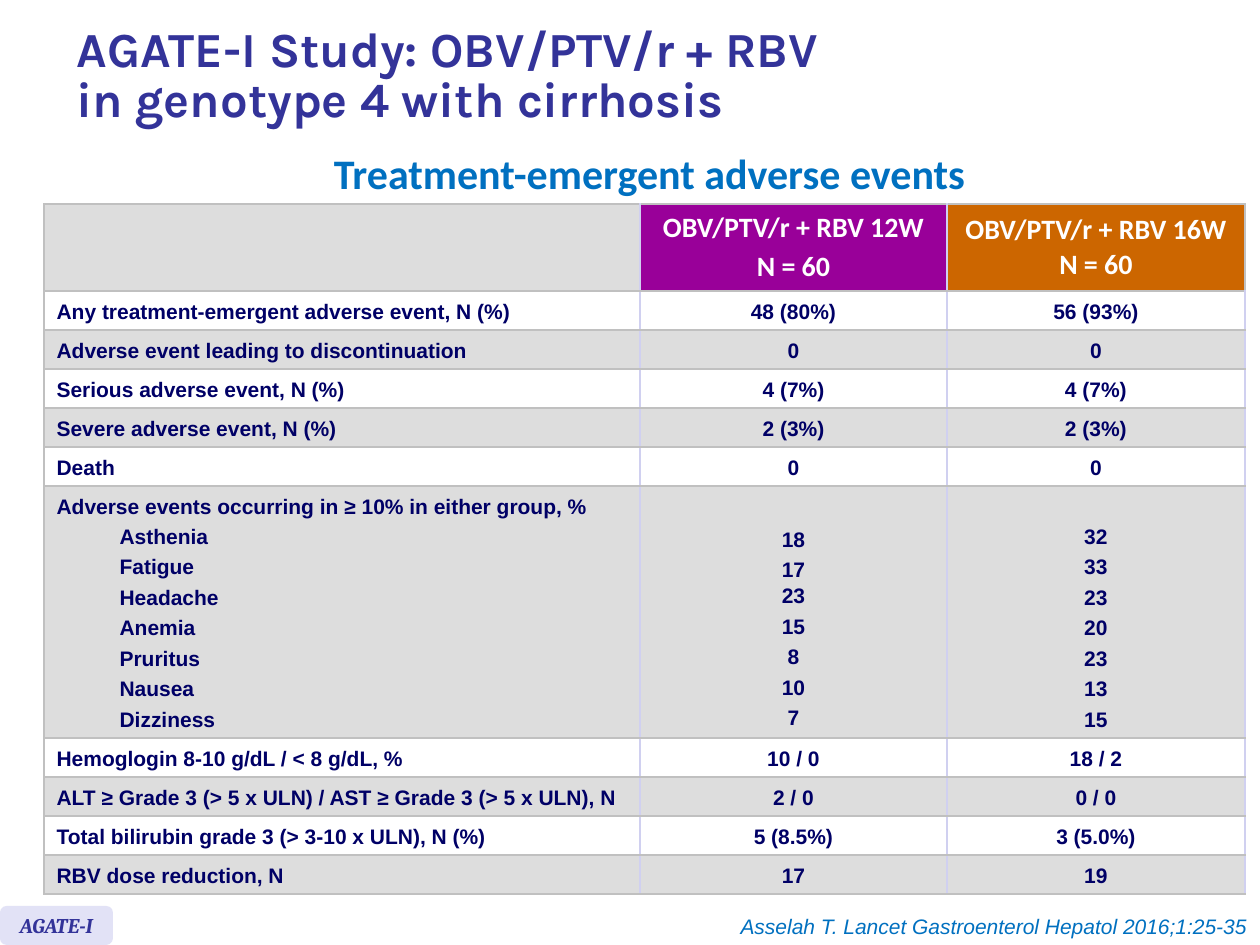
from dataclasses import dataclass, replace

from lxml import etree
from pptx import Presentation
from pptx.dml.color import RGBColor
from pptx.enum.shapes import MSO_SHAPE
from pptx.enum.text import MSO_ANCHOR, MSO_AUTO_SIZE, PP_ALIGN
from pptx.oxml.ns import qn
from pptx.util import Emu, Pt

LEFT, MID, RIGHT = PP_ALIGN.LEFT, PP_ALIGN.CENTER, PP_ALIGN.RIGHT
CENTER, BOTTOM = MSO_ANCHOR.MIDDLE, MSO_ANCHOR.BOTTOM
ROUND = MSO_SHAPE.ROUNDED_RECTANGLE
FIXED = MSO_AUTO_SIZE.NONE

WHITE = RGBColor(0xFF, 0xFF, 0xFF)
GREY = RGBColor(0xDD, 0xDD, 0xDD)
RULE = RGBColor(0xC0, 0xC0, 0xC0)
LILAC = RGBColor(0xD0, 0xD0, 0xF0)
PALE = RGBColor(0xE2, 0xE2, 0xF6)
PURPLE = RGBColor(0x99, 0x00, 0x99)
ORANGE = RGBColor(0xCC, 0x66, 0x00)
NAVY = RGBColor(0x00, 0x00, 0x66)
INDIGO = RGBColor(0x33, 0x33, 0x99)
BLUE = RGBColor(0x00, 0x70, 0xC0)

WIDTHS = (596, 307, 298)
HEAD_H, ROW_H, LIST_H = 87, 39, 252
INDENT = 63


@dataclass(frozen=True)
class Style:
    """Look of a paragraph; line is a length or a multiple."""
    face: str
    size: int
    color: RGBColor
    bold: bool = True
    italic: bool = False
    align: PP_ALIGN = MID
    line: Pt | float | None = None
    gap: float = 0


@dataclass(frozen=True)
class Row:
    """One table row: a label, its values, and the listed events."""
    label: str
    short: str
    long: str
    items: tuple[str, ...] = ()


TITLE = Style("Karla", 28, INDIGO, align=LEFT, line=0.85)
SUB = Style("Calibri", 24, BLUE, line=Pt(15.2))
HEAD = Style("Calibri", 16, WHITE, gap=3.2)
VALUE = Style("Arial", 12, NAVY, line=Pt(15), gap=2.4)
LABEL = replace(VALUE, align=LEFT)
BADGE = Style("Cambria", 12, INDIGO, italic=True)
CITE = Style("Arial", 12, BLUE, bold=False, italic=True, align=RIGHT)

ROWS = (
    Row("Any treatment-emergent adverse event, N (%)", "48 (80%)", "56 (93%)"),
    Row("Adverse event leading to discontinuation", "0", "0"),
    Row("Serious adverse event, N (%)", "4 (7%)", "4 (7%)"),
    Row("Severe adverse event, N (%)", "2 (3%)", "2 (3%)"),
    Row("Death", "0", "0"),
    Row("Adverse events occurring in ≥ 10% in either group, %",
        "18\n17\v23\n15\n8\n10\n7", "32\n33\n23\n20\n23\n13\n15",
        ("Asthenia", "Fatigue", "Headache", "Anemia", "Pruritus", "Nausea", "Dizziness")),
    Row("Hemoglogin 8-10 g/dL / < 8 g/dL, %", "10 / 0", "18 / 2"),
    Row("ALT ≥ Grade 3 (> 5 x ULN) / AST ≥ Grade 3 (> 5 x ULN), N", "2 / 0", "0 / 0"),
    Row("Total bilirubin grade 3 (> 3-10 x ULN), N (%)", "5 (8.5%)", "3 (5.0%)"),
    Row("RBV dose reduction, N", "17", "19"),
)


def px(n: int) -> Emu:
    """Turn px into EMU at 126 px to the inch."""
    return Emu(round(n * 914400 / 126))


def write(frame, text: str, style: Style) -> None:
    """Fill a text frame and style each paragraph."""
    frame.text = text
    for i, para in enumerate(frame.paragraphs):
        para.alignment = style.align
        if style.line:
            para.line_spacing = style.line
        if i and style.gap:
            para.space_before = Pt(style.gap)
        font = para.font
        font.name, font.size = style.face, Pt(style.size)
        font.bold, font.italic = style.bold, style.italic
        font.color.rgb = style.color


def place(shape, left: int, top: int, width: int, height: int) -> None:
    """Move and size a shape in px."""
    shape.left, shape.top = px(left), px(top)
    shape.width, shape.height = px(width), px(height)


def add_text(slide, text: str, style: Style, *box: int) -> None:
    """Add a wrapped text box."""
    frame = slide.shapes.add_textbox(*map(px, box)).text_frame
    frame.word_wrap = True
    write(frame, text, style)


def edge(cell, side: str, color: RGBColor) -> None:
    """Draw a one-point border on one side of a cell."""
    line = etree.SubElement(cell._tc.get_or_add_tcPr(), qn(f"a:ln{side}"), w=str(Pt(1)))
    fill = etree.SubElement(line, qn("a:solidFill"))
    etree.SubElement(fill, qn("a:srgbClr"), val=str(color))


def paint(cell, fill: RGBColor, first: bool, last: bool) -> None:
    """Set the borders, fill and anchor of a cell."""
    sides = {"L": RULE if first else LILAC, "R": RULE if last else LILAC,
             "T": RULE, "B": RULE}
    for side, color in sides.items():
        edge(cell, side, color)
    cell.fill.solid()
    cell.fill.fore_color.rgb = fill
    cell.vertical_anchor = CENTER


def fill_row(cells, row: Row, fill: RGBColor) -> None:
    """Write one row of adverse events."""
    texts = ("\n".join((row.label, *row.items)), row.short, row.long)
    for i, (cell, text) in enumerate(zip(cells, texts)):
        paint(cell, fill, i == 0, False)
        write(cell.text_frame, text, VALUE if i else LABEL)
        if row.items and i:
            cell.vertical_anchor = BOTTOM
    if row.items:
        cells[1].margin_bottom = px(8)
        for para in cells[0].text_frame.paragraphs[1:]:
            para.level = 1
            para._p.get_or_add_pPr().set("marL", str(px(INDENT)))


def add_grid(slide) -> None:
    """Build the table of adverse events."""
    tall = [HEAD_H] + [LIST_H if row.items else ROW_H for row in ROWS]
    box = (44, 204, sum(WIDTHS), sum(tall))
    grid = slide.shapes.add_table(len(tall), len(WIDTHS), *map(px, box)).table
    grid.first_row = grid.horz_banding = False
    for col, width in zip(grid.columns, WIDTHS):
        col.width = px(width)
    for row, height in zip(grid.rows, tall):
        row.height = px(height)
    blank, short, long = grid.rows[0].cells
    paint(blank, GREY, True, False)
    paint(short, PURPLE, False, False)
    paint(long, ORANGE, False, True)
    write(short.text_frame, "OBV/PTV/r + RBV 12W\nN = 60", HEAD)
    write(long.text_frame, "OBV/PTV/r + RBV 16W\vN = 60", HEAD)
    for i, row in enumerate(ROWS):
        fill_row(list(grid.rows[i + 1].cells), row, GREY if i % 2 else WHITE)


def add_badge(slide) -> None:
    """Add the rounded study badge."""
    badge = slide.shapes.add_shape(ROUND, *map(px, (0, 906, 113, 39)))
    badge.adjustments[0] = 0.17
    badge.shadow.inherit = False
    badge.fill.solid()
    badge.fill.fore_color.rgb = PALE
    badge.line.fill.background()
    badge.text_frame.word_wrap = False
    badge.text_frame.vertical_anchor = CENTER
    write(badge.text_frame, "AGATE-I", BADGE)


def main() -> None:
    """Build and save the slide."""
    deck = Presentation()
    deck.slide_width, deck.slide_height = px(1260), px(945)
    slide = deck.slides.add_slide(deck.slide_layouts[5])
    title = slide.shapes.title
    place(title, 64, 10, 1150, 135)
    title.text_frame.auto_size = FIXED
    title.text_frame.vertical_anchor = CENTER
    write(title.text_frame, "AGATE-I Study: OBV/PTV/r + RBV\vin genotype 4 with cirrhosis", TITLE)
    add_grid(slide)
    add_text(slide, "Treatment-emergent adverse events", SUB, 54, 165, 1191, 44)
    add_badge(slide)
    add_text(slide, "Asselah T. Lancet Gastroenterol Hepatol 2016;1:25-35", CITE, 263, 907, 997, 38)
    deck.save("out.pptx")


if __name__ == "__main__":
    main()
